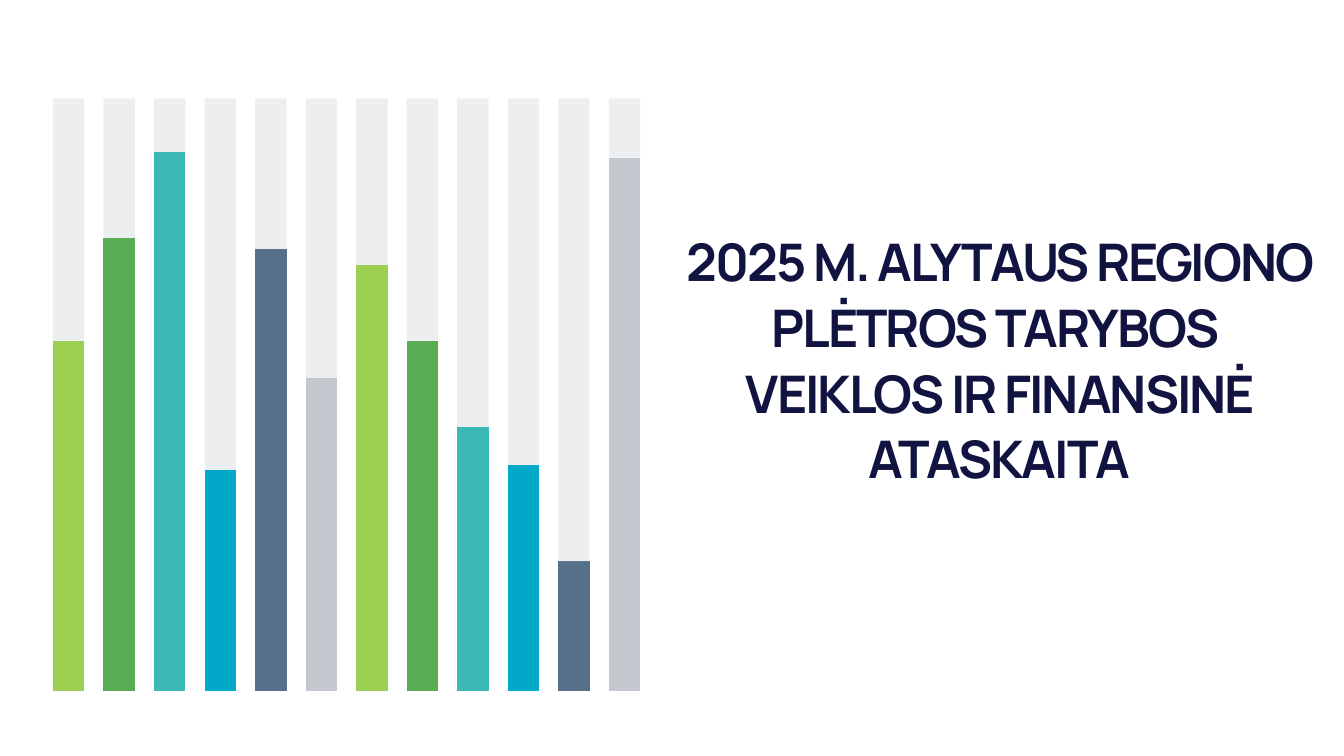
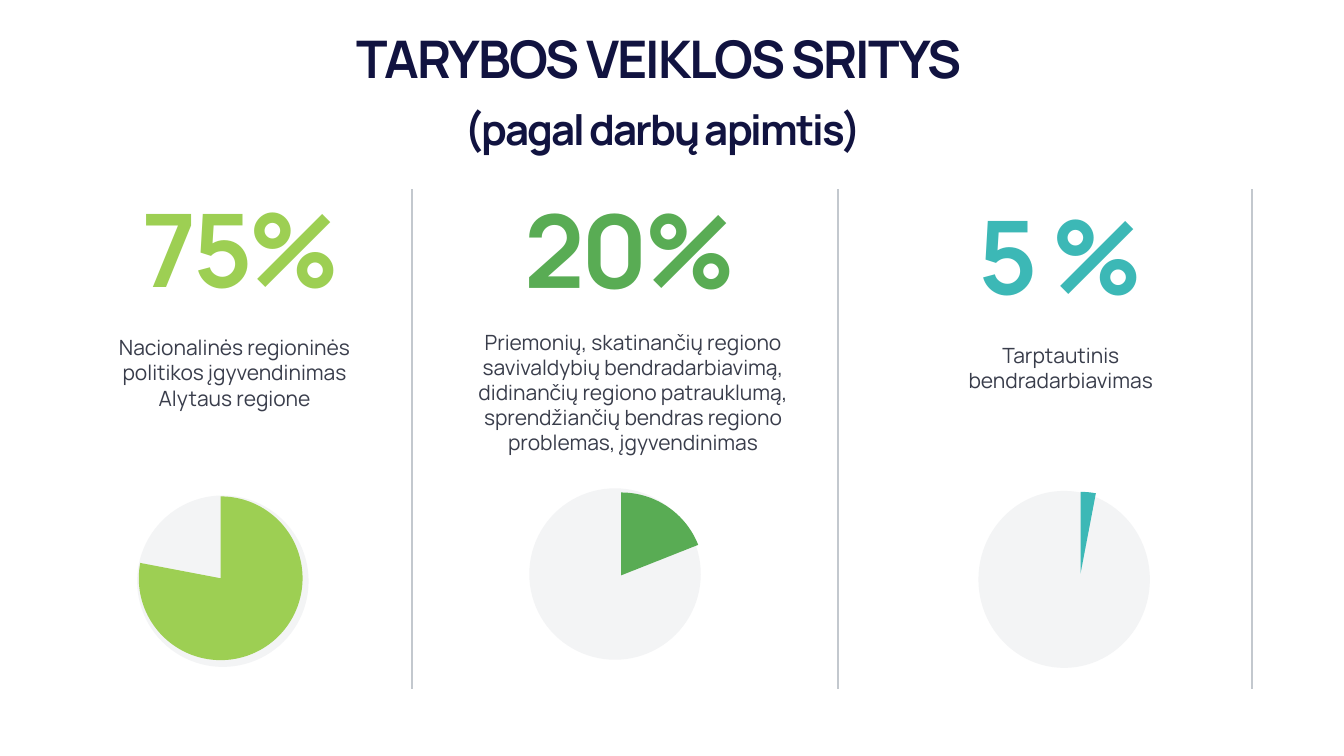
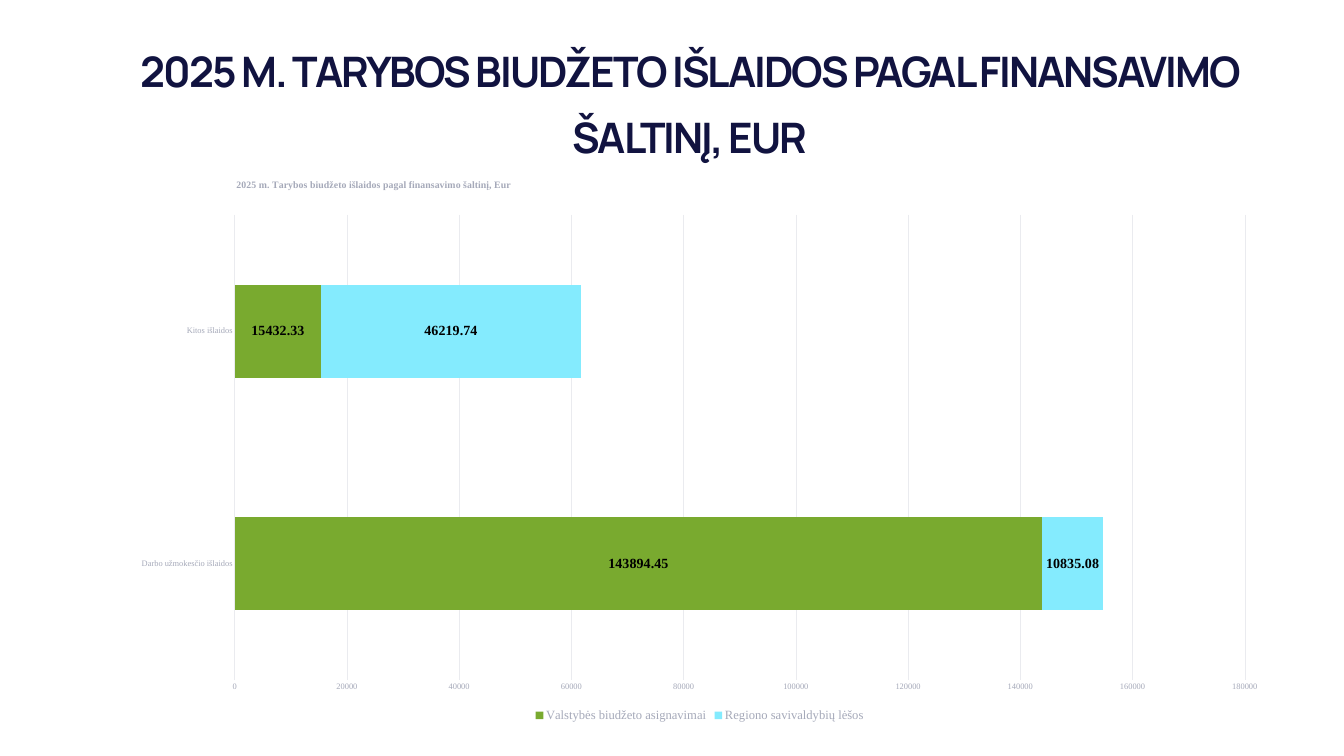
from collections import namedtuple

from lxml import etree
from pptx import Presentation
from pptx.chart.data import CategoryChartData
from pptx.dml.color import RGBColor
from pptx.enum.chart import XL_CHART_TYPE as Chart
from pptx.enum.chart import XL_LABEL_POSITION as LabelPosition
from pptx.enum.chart import XL_LEGEND_POSITION as LegendPosition
from pptx.enum.chart import XL_TICK_MARK as TickMark
from pptx.enum.shapes import MSO_CONNECTOR as Connector
from pptx.enum.shapes import MSO_SHAPE as Shape
from pptx.enum.text import MSO_ANCHOR as Anchor
from pptx.enum.text import MSO_AUTO_SIZE as AutoSize
from pptx.enum.text import PP_ALIGN as Align
from pptx.oxml.ns import qn
from pptx.util import Cm, Pt

NAVY = RGBColor(0x11, 0x13, 0x40)
SLATE = RGBColor(0x39, 0x3D, 0x4B)
LIME = RGBColor(0x9D, 0xCF, 0x53)
GREEN = RGBColor(0x59, 0xAC, 0x54)
TEAL = RGBColor(0x3C, 0xB8, 0xB6)
CYAN = RGBColor(0x01, 0xA8, 0xC7)
STEEL = RGBColor(0x56, 0x70, 0x8A)
SILVER = RGBColor(0xC3, 0xC8, 0xCE)
LABEL_GRAY = RGBColor(0xA5, 0xA9, 0xB9)
CHART_GRAY = RGBColor(0x74, 0x7A, 0x94)
GRID_GRAY = RGBColor(0xEA, 0xEB, 0xEF)
OLIVE = RGBColor(0x79, 0xAA, 0x2F)
SKY = RGBColor(0x84, 0xEB, 0xFE)
BLACK = RGBColor(0, 0, 0)
PALETTE = [LIME, GREEN, TEAL, CYAN, STEEL, SILVER]

SANS = "Manrope"
SERIF = "Times New Roman"
TITLE_ONLY = 5

Box = namedtuple("Box", "left top width height")


def inside(area, part):
    return Box(area.left + part.left, area.top + part.top, part.width, part.height)


def in_cm(box):
    return [Cm(length) for length in box]


def style_font(font, size, color, name, bold=False):
    font.size = Pt(size)
    font.name = name
    font.bold = bold
    font.color.rgb = color


def write_text(frame, lines, size=30, color=SLATE, bold=False, tracking=0,
               spacing=None, anchor=Anchor.TOP):
    frame.word_wrap = True
    frame.auto_size = AutoSize.NONE
    frame.vertical_anchor = anchor
    for index, line in enumerate(lines):
        text, line_size = line if isinstance(line, tuple) else (line, size)
        para = frame.paragraphs[0] if index == 0 else frame.add_paragraph()
        para.alignment = Align.CENTER
        if spacing:
            para.line_spacing = Pt(spacing)
        span = para.add_run()
        span.text = text
        style_font(span.font, line_size, color, SANS, bold)
        if tracking:
            span.font._element.set("spc", str(round(tracking * 100)))


def add_text(page, box, lines, **text_format):
    write_text(page.shapes.add_textbox(*in_cm(box)).text_frame, lines, **text_format)


def add_page(deck, title_box, title_lines):
    page = deck.slides.add_slide(deck.slide_layouts[TITLE_ONLY])
    title = page.shapes.title
    title.left, title.top, title.width, title.height = in_cm(title_box)
    write_text(title.text_frame, title_lines, size=74, color=NAVY, bold=True,
               tracking=-2.9, spacing=94, anchor=Anchor.BOTTOM)
    return page


def set_alpha(element, percent):
    for color in element.iter(qn("a:srgbClr")):
        etree.SubElement(color, qn("a:alpha")).set("val", str(percent * 1000))


def paint(part, color=None, alpha=None):
    if color is None:
        part.fill.background()
    else:
        part.fill.solid()
        part.fill.fore_color.rgb = color
    part.line.fill.background()


def make_layout(**position):
    layout = etree.Element(qn("c:layout"))
    manual = etree.SubElement(layout, qn("c:manualLayout"))
    entries = dict(xMode="edge", yMode="edge", **position)
    if "w" in position:
        entries = dict(layoutTarget="inner", **entries)
    for tag, value in entries.items():
        etree.SubElement(manual, qn(f"c:{tag}")).set("val", str(value))
    return layout


def drop_layout(parent):
    for layout in parent.findall(qn("c:layout")):
        parent.remove(layout)


def add_chart(page, box, kind, categories, series, plot):
    data = CategoryChartData()
    data.categories = categories
    for name, values in series:
        data.add_series(name, values)
    chart = page.shapes.add_chart(kind, *in_cm(box), data).chart
    chart.has_legend = False
    chart.has_title = False
    style_font(chart.font, 10, CHART_GRAY, "Calibri")
    root = chart.element.find(qn("c:chart"))
    frame = etree.Element(qn("c:spPr"))
    etree.SubElement(frame, qn("a:noFill"))
    etree.SubElement(etree.SubElement(frame, qn("a:ln")), qn("a:noFill"))
    root.addnext(frame)
    plot_area = root.find(qn("c:plotArea"))
    drop_layout(plot_area)
    plot_area.insert(0, make_layout(**dict(zip("xywh", plot))))
    return chart


def draw_month_bars(page, box):
    heights = [65, 84, 100, 41, 82, 58, 79, 65, 49, 42, 24, 99]
    rests = [46, 26, 11, 70, 28, 53, 31, 46, 62, 69, 87, 12]
    chart = add_chart(page, box, Chart.COLUMN_STACKED,
                      [str(number) for number in range(1, 13)],
                      [("Series 1", heights), ("Series 2", rests)],
                      plot=(0.02, 0.076, 0.96, 0.903))
    chart.category_axis.visible = False
    axis = chart.value_axis
    axis.visible = False
    axis.has_major_gridlines = False
    axis.minimum_scale, axis.maximum_scale = 0, 110
    bars = chart.plots[0]
    bars.gap_width, bars.overlap = 61, 100
    bars.vary_by_categories = False
    front, back = bars.series
    for index in range(len(heights)):
        paint(front.points[index].format, PALETTE[index % len(PALETTE)])
    paint(back.format, SILVER)
    set_alpha(back.format._element if hasattr(back.format, "_element")
              else back._element.find(qn("c:spPr")), 30)


def draw_disc(page, box):
    disc = page.shapes.add_shape(Shape.OVAL, *in_cm(box))
    disc.shadow.inherit = False
    paint(disc, SILVER)
    set_alpha(disc._element.spPr, 20)


def draw_divider(page, left, top, height):
    line = page.shapes.add_connector(Connector.STRAIGHT, Cm(left), Cm(top),
                                     Cm(left), Cm(top + height))
    line.line.color.rgb = SILVER
    line.line.width = Pt(2.75)
    etree.SubElement(line._element.spPr, qn("a:effectLst"))


def draw_pie(page, box, share, color, plot):
    chart = add_chart(page, box, Chart.PIE, ["1", "2"],
                      [("Series 1", [share, 100 - share])], plot)
    slices = chart.plots[0].series[0].points
    paint(slices[0].format, color)
    paint(slices[1].format)


def draw_activity(page, area, activity):
    draw_divider(page, area.left + area.width, area.top, area.height)
    draw_disc(page, inside(area, activity["disc"]))
    add_text(page, inside(area, activity["caption_box"]), [activity["caption"]])
    add_text(page, inside(area, activity["percent_box"]), [activity["percent"]],
             size=145, color=activity["color"], bold=True, tracking=-5,
             anchor=Anchor.BOTTOM)
    draw_pie(page, inside(area, activity["pie"]), activity["share"],
             activity["color"], activity["plot"])


ACTIVITIES = [
    dict(percent="75%", share=78, color=LIME,
         caption="Nacionalinės regioninės politikos įgyvendinimas Alytaus regione",
         percent_box=Box(5.94, -0.34, 12.45, 6.45),
         caption_box=Box(5.61, 7.21, 12.42, 5.38),
         disc=Box(6.91, 15.44, 8.64, 8.64),
         pie=Box(6.48, 15.08, 9.19, 9.07), plot=(0.055, 0.045, 0.9, 0.91)),
    dict(percent="20%", share=19, color=GREEN,
         caption="Priemonių, skatinančių regiono savivaldybių bendradarbiavimą, "
                 "didinančių regiono patrauklumą, sprendžiančių bendras regiono "
                 "problemas, įgyvendinimas",
         percent_box=Box(4.77, -0.31, 12.45, 6.45),
         caption_box=Box(2.18, 6.93, 17.88, 6.68),
         disc=Box(5.89, 15.08, 8.64, 8.64),
         pie=Box(5.28, 14.96, 10.03, 9.17), plot=(0.103, 0.036, 0.839, 0.911)),
    dict(percent="5 %", share=3, color=TEAL,
         caption="Tarptautinis bendradarbiavimas",
         percent_box=Box(5.03, 0.02, 12.45, 6.45),
         caption_box=Box(5.03, 7.59, 12.42, 2.84),
         disc=Box(7.09, 15.21, 8.64, 8.92),
         pie=Box(7.27, 14.85, 9.93, 9.07), plot=(0.084, 0.045, 0.832, 0.91)),
]


def draw_budget_chart(page, box):
    chart = add_chart(page, box, Chart.BAR_STACKED,
                      ["Darbo užmokesčio išlaidos", "Kitos išlaidos"],
                      [("Valstybės biudžeto asignavimai", [143894.45, 15432.33]),
                       ("Regiono savivaldybių lėšos", [10835.08, 46219.74])],
                      plot=(0.1, 0.075, 0.869, 0.844))
    chart.has_title = True
    para = chart.chart_title.text_frame.paragraphs[0]
    span = para.add_run()
    span.text = "2025 m. Tarybos biudžeto išlaidos pagal finansavimo šaltinį, Eur"
    style_font(span.font, 14, LABEL_GRAY, SERIF, bold=True)
    title = chart.chart_title._element
    drop_layout(title)
    title.find(qn("c:tx")).addnext(make_layout(x=0.1, y=0.005))

    chart.has_legend = True
    chart.legend.position = LegendPosition.BOTTOM
    chart.legend.include_in_layout = False
    style_font(chart.legend.font, 18, LABEL_GRAY, SERIF)

    for axis in (chart.category_axis, chart.value_axis):
        axis.major_tick_mark = axis.minor_tick_mark = TickMark.NONE
        style_font(axis.tick_labels.font, 12, LABEL_GRAY, SERIF)
    chart.value_axis.format.line.fill.background()
    chart.value_axis.minimum_scale = 0
    chart.value_axis.maximum_scale = 180000
    chart.value_axis.major_unit = 20000
    for line in (chart.category_axis.format.line,
                 chart.value_axis.major_gridlines.format.line):
        line.color.rgb = GRID_GRAY
        line.width = Pt(0.75)

    bars = chart.plots[0]
    bars.gap_width, bars.overlap = 150, 100
    bars.vary_by_categories = False
    for series, color in zip(bars.series, (OLIVE, SKY)):
        paint(series.format, color)
        labels = series.data_labels
        labels.show_value = True
        labels.position = LabelPosition.CENTER
        style_font(labels.font, 20, BLACK, SERIF, bold=True)


def build_cover(deck):
    page = add_page(deck, Box(33.38, 11.23, 33.96, 13.56),
                    ["2025 M. ALYTAUS REGIONO PLĖTROS TARYBOS ",
                     "VEIKLOS IR FINANSINĖ ATASKAITA"])
    draw_month_bars(page, Box(1.55, 2.44, 31.83, 33.07))


def build_activities(deck):
    page = add_page(deck, Box(3.78, 1.04, 59.26, 6.86),
                    ["TARYBOS VEIKLOS SRITYS ", ("(pagal darbų apimtis)", 60)])
    edges = [0, 20.78, 42.21, 63.1]
    for left, right, activity in zip(edges, edges[1:], ACTIVITIES):
        draw_activity(page, Box(left, 9.53, right - left, 25.17), activity)


def build_budget(deck):
    page = add_page(deck, Box(6.53, 1.57, 56.44, 6.71),
                    [("2025 M. TARYBOS BIUDŽETO IŠLAIDOS PAGAL FINANSAVIMO "
                      "ŠALTINĮ, EUR", 60)])
    draw_budget_chart(page, Box(5.97, 8.74, 58.57, 27.79))


def main():
    deck = Presentation()
    deck.slide_width, deck.slide_height = Cm(67.72), Cm(38.1)
    build_cover(deck)
    build_activities(deck)
    build_budget(deck)
    deck.save("out.pptx")


if __name__ == "__main__":
    main()
